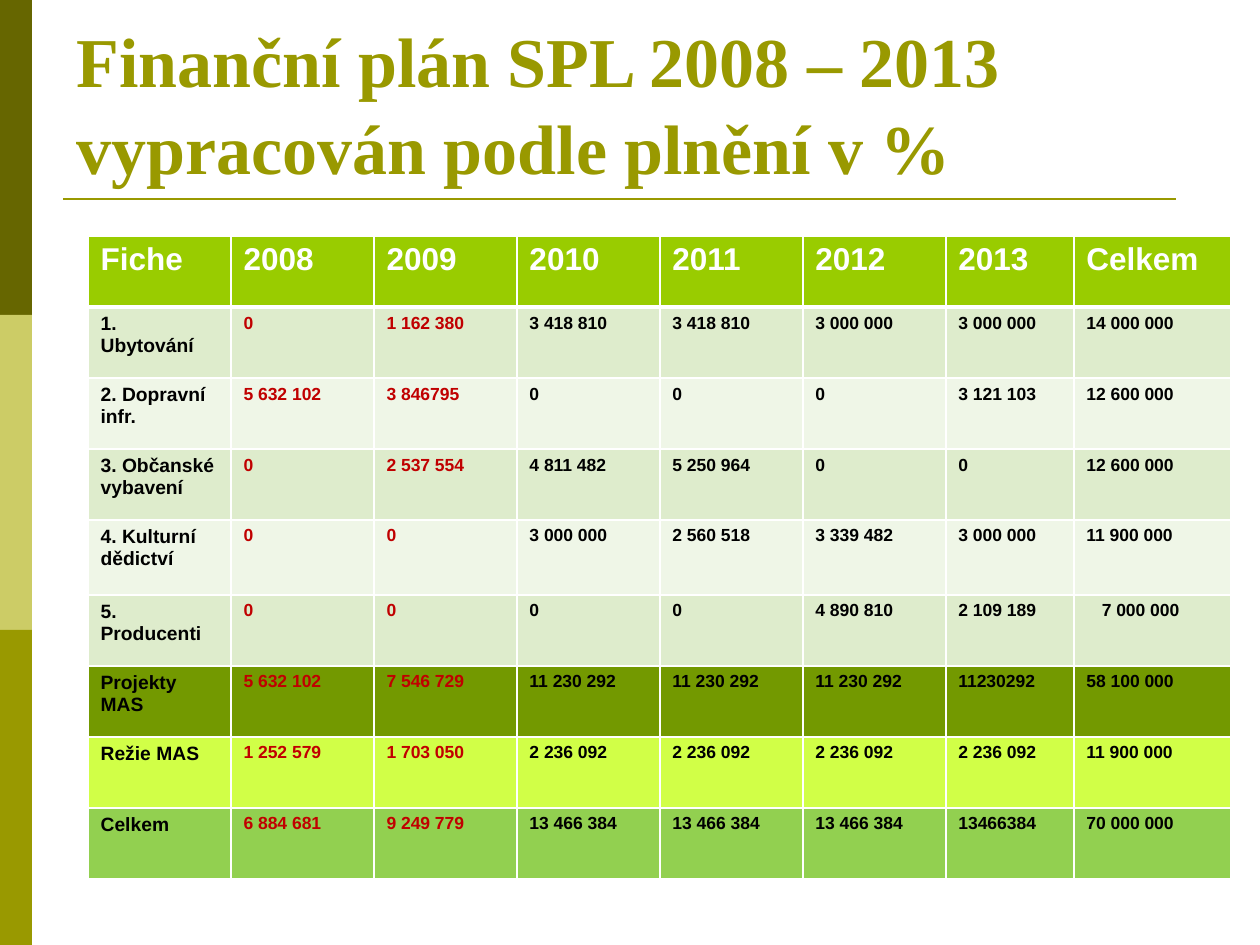
from lxml import etree
from pptx import Presentation
from pptx import util as u
from pptx.dml.color import RGBColor
from pptx.enum import shapes, text
from pptx.oxml.ns import qn

COLORS = {
    "dark": "666600", "pale": "CCCC66", "olive": "999900", "white": "FFFFFF",
    "header": "99CC00", "band": "DEECCC", "light band": "EFF6E7",
    "projects": "739900", "overhead": "D1FF47", "total": "92D050",
    "black": "000000", "red": "C00000",
}
HEADERS = ["Fiche", "2008", "2009", "2010", "2011", "2012", "2013", "Celkem"]
ROWS = [
    ("band", "1.\vUbytování", "0", "1 162 380", "3 418 810", "3 418 810",
     "3 000 000", "3 000 000", "14 000 000"),
    ("light band", "2. Dopravní infr.", "5 632 102", "3 846795", "0", "0",
     "0", "3 121 103", "12 600 000"),
    ("band", "3. Občanské vybavení", "0", "2 537 554", "4 811 482", "5 250 964",
     "0", "0", "12 600 000"),
    ("light band", "4. Kulturní dědictví", "0", "0", "3 000 000", "2 560 518",
     "3 339 482", "3 000 000", "11 900 000"),
    ("band", "5. Producenti", "0", "0", "0", "0",
     "4 890 810", "2 109 189", "7 000 000"),
    ("projects", "Projekty MAS", "5 632 102", "7 546 729", "11 230 292",
     "11 230 292", "11 230 292", "11230292", "58 100 000"),
    ("overhead", "Režie MAS", "1 252 579", "1 703 050", "2 236 092",
     "2 236 092", "2 236 092", "2 236 092", "11 900 000"),
    ("total", "Celkem", "6 884 681", "9 249 779", "13 466 384",
     "13 466 384", "13 466 384", "13466384", "70 000 000"),
]
COLUMN_WIDTHS = [143] * 6 + [128, 157]
ROW_HEIGHTS = [71] * 4 + [75] + [71] * 4


def px(count):
    return u.Emu(round(count * 914400 / 126))


def color(name):
    return RGBColor.from_string(COLORS[name])


def set_font(font, face, size, name):
    font.name, font.size, font.bold = face, u.Pt(size), True
    font.color.rgb = color(name)


def add_side_bar(page, left, top, width, height):
    names = ["dark", "pale", "olive"]
    part = height // len(names)
    for index, name in enumerate(names):
        block = page.shapes.add_shape(
            shapes.MSO_SHAPE.RECTANGLE,
            px(left), px(top + index * part), px(width), px(part))
        block.shadow.inherit = False
        block.fill.solid()
        block.fill.fore_color.rgb = color(name)
        block.line.fill.background()


def add_heading(page, left, top, width, height):
    """Place the title and the rule under it."""
    title = page.shapes.title
    title.left, title.top = px(left), px(top)
    title.width, title.height = px(width), px(height)
    frame = title.text_frame
    frame.text = "Finanční plán SPL 2008 – 2013 vypracován podle plnění v %"
    frame.word_wrap = True
    frame.auto_size = text.MSO_AUTO_SIZE.NONE
    frame.vertical_anchor = text.MSO_ANCHOR.BOTTOM
    para = frame.paragraphs[0]
    para.alignment = text.PP_ALIGN.LEFT
    para.line_spacing = 1.04
    set_font(para.font, "Times New Roman", 40, "olive")

    rule_top = px(top + height + 4)
    rule = page.shapes.add_connector(
        shapes.MSO_CONNECTOR.STRAIGHT,
        px(left - 1), rule_top, px(left + 1112), rule_top)
    rule.line.color.rgb = color("olive")
    rule.line.width = u.Pt(1.5)
    etree.SubElement(rule.element.spPr, qn("a:effectLst"))


def set_borders(cell, widths):
    """Draw white borders; widths are points for left, right, top, bottom."""
    properties = cell._tc.get_or_add_tcPr()
    for index, (side, width) in enumerate(zip("LRTB", widths)):
        border = etree.Element(qn("a:ln" + side), w=str(u.Pt(width)))
        fill = etree.SubElement(border, qn("a:solidFill"))
        etree.SubElement(fill, qn("a:srgbClr"), val=COLORS["white"])
        properties.insert(index, border)


def fill_cell(cell, words, fill, size, ink, borders):
    cell.text = words
    cell.fill.solid()
    cell.fill.fore_color.rgb = color(fill)
    set_font(cell.text_frame.paragraphs[0].font, "Arial", size, ink)
    set_borders(cell, borders)


def add_plan_table(page, left, top):
    table = page.shapes.add_table(
        len(ROWS) + 1, len(HEADERS), px(left), px(top),
        px(sum(COLUMN_WIDTHS)), px(sum(ROW_HEIGHTS))).table
    table.first_row = table.horz_banding = False
    for column, width in zip(table.columns, COLUMN_WIDTHS):
        column.width = px(width)
    for row, height in zip(table.rows, ROW_HEIGHTS):
        row.height = px(height)

    for column, words in enumerate(HEADERS):
        fill_cell(table.cell(0, column), words, "header", 18, "white", (1, 1, 1, 3))
    for row, (fill, *values) in enumerate(ROWS, start=1):
        borders = (1, 1, 3 if row == 1 else 1, 1)
        for column, words in enumerate(values):
            size = 11 if column == 0 else 10
            ink = "red" if column in (1, 2) else "black"
            fill_cell(table.cell(row, column), words, fill, size, ink, borders)
    table.cell(5, 7).margin_left = px(28)


def main():
    deck = Presentation()
    deck.slide_width, deck.slide_height = px(1260), px(945)
    page = deck.slides.add_slide(deck.slide_layouts.get_by_name("Title Only"))
    add_side_bar(page, 0, 0, 32, 945)
    add_heading(page, 64, 38, 1134, 157)
    add_plan_table(page, 88, 236)
    deck.save("out.pptx")


if __name__ == "__main__":
    main()
